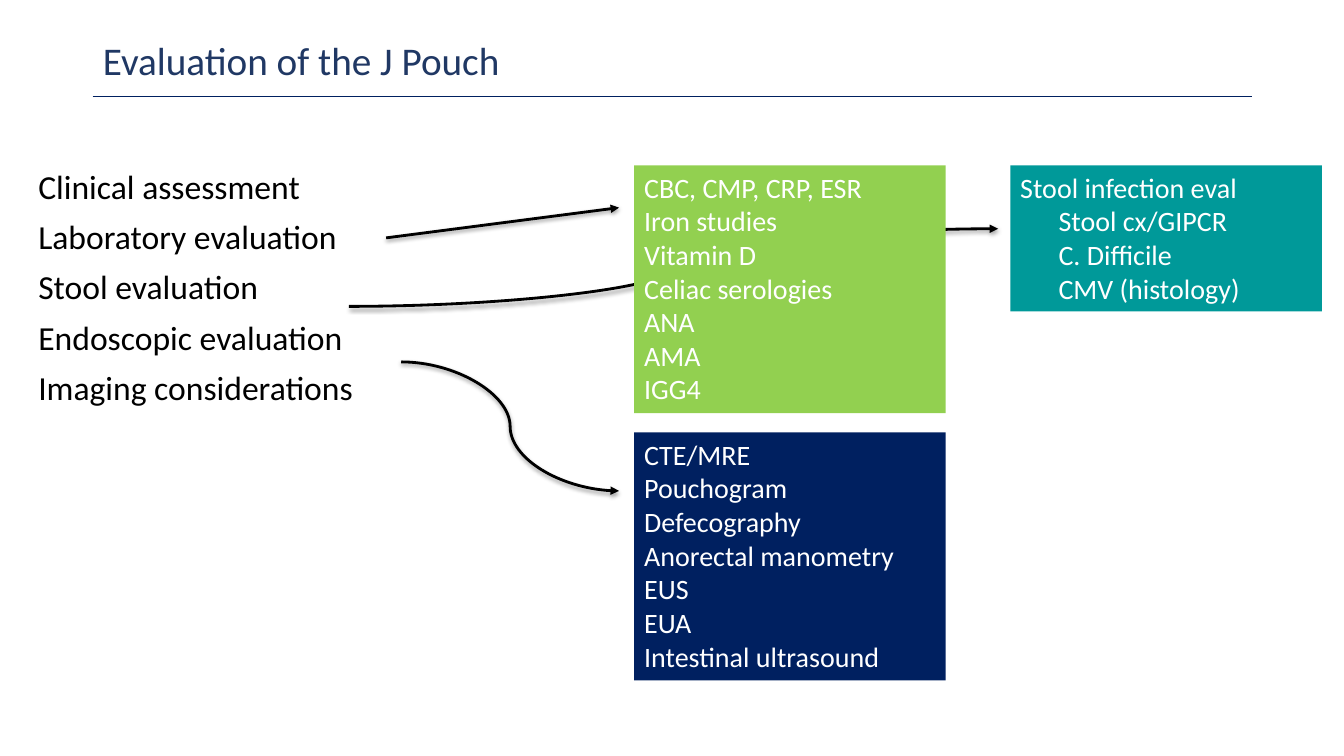
from dataclasses import dataclass

import lxml.etree
import pptx
import pptx.dml.color
import pptx.enum.shapes
import pptx.enum.text
import pptx.oxml
import pptx.oxml.ns
import pptx.util

Inches = pptx.util.Inches
Connector = pptx.enum.shapes.MSO_CONNECTOR
qn = pptx.oxml.ns.qn


@dataclass(frozen=True)
class Theme:
    font: str = "Calibri"
    title: str = "203864"
    navy: str = "002060"
    green: str = "92D050"
    teal: str = "009999"
    black: str = "000000"
    white: str = "FFFFFF"
    title_size: int = 28
    list_size: int = 24
    panel_size: int = 20


@dataclass(frozen=True)
class Panel:
    left: float
    top: float
    height: float
    fill: str
    lines: tuple[str, ...]
    sublines: tuple[str, ...] = ()


@dataclass(frozen=True)
class Arrow:
    kind: Connector
    start: tuple[float, float]
    end: tuple[float, float]


THEME = Theme()
PANEL_WIDTH = 3.09
SUBLINE_INDENT = 0.38

TOPICS = (
    "Clinical assessment",
    "Laboratory evaluation",
    "Stool evaluation",
    "Endoscopic evaluation",
    "Imaging considerations",
)
STOOL_ARROW = Arrow(Connector.CURVE, (3.46, 3.04), (9.9, 2.27))
LABORATORY_ARROW = Arrow(Connector.STRAIGHT, (3.83, 2.36), (6.14, 2.06))
IMAGING_ARROW = Arrow(Connector.CURVE, (3.98, 3.59), (6.14, 4.87))
LABORATORY = Panel(6.29, 1.64, 2.46, THEME.green, (
    "CBC, CMP, CRP, ESR", "Iron studies", "Vitamin D", "Celiac serologies",
    "ANA", "AMA", "IGG4"))
STOOL = Panel(10.02, 1.64, 1.45, THEME.teal, ("Stool infection eval",),
              ("Stool cx/GIPCR", "C. Difficile", "CMV (histology)"))
IMAGING = Panel(6.29, 4.29, 2.46, THEME.navy, (
    "CTE/MRE", "Pouchogram", "Defecography", "Anorectal manometry",
    "EUS", "EUA", "Intestinal ultrasound"))


def rgb(value: str) -> pptx.dml.color.RGBColor:
    return pptx.dml.color.RGBColor.from_string(value)


def write_line(frame, index: int, text: str, size: int, color: str,
               indent: float = 0, spacing: float = 1, before: float = 0) -> None:
    """Write one left-aligned, unbulleted paragraph."""
    paragraph = frame.paragraphs[0] if index == 0 else frame.add_paragraph()
    properties = paragraph._p.get_or_add_pPr()
    properties.set("marL", str(Inches(indent)))
    properties.set("indent", "0")
    lxml.etree.SubElement(properties, qn("a:buNone"))
    paragraph.alignment = pptx.enum.text.PP_ALIGN.LEFT
    paragraph.line_spacing = spacing
    paragraph.space_before = pptx.util.Pt(before if index else 0)
    run = paragraph.add_run()
    run.text = text
    run.font.name = THEME.font
    run.font.size = pptx.util.Pt(size)
    run.font.color.rgb = rgb(color)


def fill_placeholder(placeholder, top: float, height: float,
                     anchor: pptx.enum.text.MSO_ANCHOR,
                     lines: tuple[str, ...], size: int, color: str,
                     left: float, before: float = 0) -> None:
    placeholder.left, placeholder.top = Inches(left), Inches(top)
    placeholder.width, placeholder.height = Inches(11.5), Inches(height)
    frame = placeholder.text_frame
    frame.auto_size = pptx.enum.text.MSO_AUTO_SIZE.NONE
    frame.vertical_anchor = anchor
    for index, text in enumerate(lines):
        write_line(frame, index, text, size, color, spacing=0.9, before=before)


def draw_connector(slide, kind: Connector, start: tuple[float, float],
                   end: tuple[float, float], color: str, width: float):
    """Draw a connector with an empty effect list, and return it."""
    connector = slide.shapes.add_connector(
        kind, *(Inches(value) for value in start + end))
    connector.line.color.rgb = rgb(color)
    connector.line.width = pptx.util.Pt(width)
    lxml.etree.SubElement(connector._element.spPr, qn("a:effectLst"))
    return connector


def draw_arrow(slide, arrow: Arrow) -> None:
    """Draw a black arrow with a soft shadow below it."""
    connector = draw_connector(
        slide, arrow.kind, arrow.start, arrow.end, THEME.black, 2)
    properties = connector._element.spPr
    lxml.etree.SubElement(
        properties.find(qn("a:ln")), qn("a:tailEnd"), type="triangle")
    shadow = lxml.etree.SubElement(
        properties.find(qn("a:effectLst")), qn("a:outerShdw"),
        blurRad=str(pptx.util.Pt(3.1)), dist=str(pptx.util.Pt(1.6)),
        dir="5400000", rotWithShape="0")
    tint = lxml.etree.SubElement(shadow, qn("a:srgbClr"), val=THEME.black)
    lxml.etree.SubElement(tint, qn("a:alpha"), val="38000")


def draw_panel(slide, panel: Panel) -> None:
    box = slide.shapes.add_shape(
        pptx.enum.shapes.MSO_SHAPE.RECTANGLE, Inches(panel.left),
        Inches(panel.top), Inches(PANEL_WIDTH), Inches(panel.height))
    box.shadow.inherit = False
    box.fill.solid()
    box.fill.fore_color.rgb = rgb(panel.fill)
    box.line.fill.background()
    frame = box.text_frame
    frame.word_wrap = True
    frame.auto_size = pptx.enum.text.MSO_AUTO_SIZE.SHAPE_TO_FIT_TEXT
    frame.vertical_anchor = pptx.enum.text.MSO_ANCHOR.TOP
    for index, text in enumerate(panel.lines + panel.sublines):
        indent = SUBLINE_INDENT if index >= len(panel.lines) else 0
        write_line(frame, index, text, THEME.panel_size, THEME.white, indent)


def main() -> None:
    presentation = pptx.Presentation()
    presentation.slide_width = Inches(13.33)
    presentation.slide_height = Inches(7.5)
    slide = presentation.slides.add_slide(presentation.slide_layouts[1])

    fill_placeholder(slide.shapes.title, 0.16, 0.93,
                     pptx.enum.text.MSO_ANCHOR.MIDDLE,
                     ("Evaluation of the J Pouch",),
                     THEME.title_size, THEME.title, left=0.92)
    fill_placeholder(slide.placeholders[1], 1.64, 4.76,
                     pptx.enum.text.MSO_ANCHOR.TOP, TOPICS,
                     THEME.list_size, THEME.black, left=0.28, before=10)
    draw_connector(slide, Connector.STRAIGHT, (0.92, 0.96), (12.42, 0.96),
                   THEME.navy, 1)

    # The stool arrow passes behind the laboratory panel.
    for arrow in (STOOL_ARROW, LABORATORY_ARROW, IMAGING_ARROW):
        draw_arrow(slide, arrow)
    for panel in (LABORATORY, STOOL, IMAGING):
        draw_panel(slide, panel)

    presentation.save("out.pptx")


if __name__ == "__main__":
    main()
